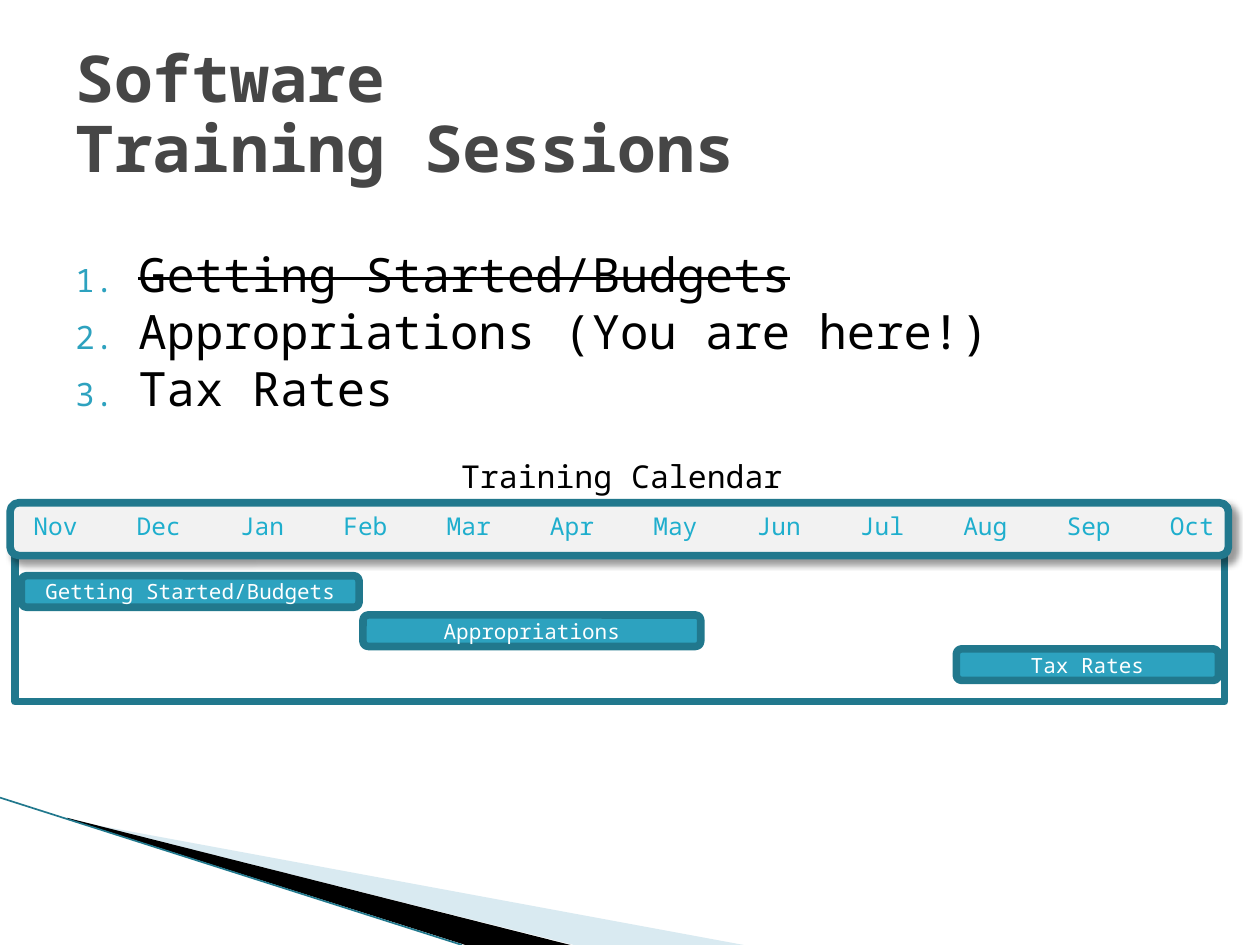
"""Build the training sessions slide with its calendar."""
from dataclasses import dataclass

from lxml.etree import SubElement
from pptx import Presentation
from pptx.dml.color import RGBColor
from pptx.enum.shapes import MSO_CONNECTOR as Connector, MSO_SHAPE as Preset
from pptx.enum.text import MSO_ANCHOR as Anchor, PP_ALIGN as Align
from pptx.oxml.ns import qn
from pptx.util import Pt


@dataclass(frozen=True)
class Theme:
    font: str = "Noto Sans Mono"
    title: str = "464646"
    text: str = "000000"
    bar: str = "2DA2BF"
    border: str = "21788D"
    month: str = "1FAECD"
    header: str = "F2F2F2"
    pale: str = "A0CBDC"
    white: str = "FFFFFF"
    title_size: float = 36.9
    list_size: float = 27
    caption_size: float = 18
    month_size: float = 14
    bar_size: float = 12
    border_width: float = 4.33


THEME = Theme()
MONTHS = "Nov Dec Jan Feb Mar Apr May Jun Jul Aug Sep Oct".split()
SESSIONS = ["Getting Started/Budgets", "Appropriations (You are here!)", "Tax Rates"]
BARS = [
    ("Getting Started/Budgets", 12.2, 329, 193),
    ("Appropriations", 207.4, 351.4, 193),
    ("Tax Rates", 546.5, 370.8, 149.8),
]


def style(paragraph, size, color, bold=False):
    for run in paragraph.runs:
        run.font.name = THEME.font
        run.font.size = Pt(size)
        run.font.bold = bold
        run.font.color.rgb = RGBColor.from_string(color)


def add_text(shapes, box, text, size, color, align=Align.LEFT, bold=False, wrap=True):
    shape = shapes.add_textbox(*map(Pt, box))
    frame = shape.text_frame
    frame.word_wrap = wrap
    frame.text = text
    for paragraph in frame.paragraphs:
        paragraph.alignment = align
        style(paragraph, size, color, bold)
    return frame


def add_box(shapes, preset, box, fill=None):
    shape = shapes.add_shape(preset, *map(Pt, box))
    shape.shadow.inherit = False
    if fill:
        shape.fill.solid()
        shape.fill.fore_color.rgb = RGBColor.from_string(fill)
    else:
        shape.fill.background()
    shape.line.color.rgb = RGBColor.from_string(THEME.border)
    shape.line.width = Pt(THEME.border_width)
    return shape


def add_alpha(color, percent):
    SubElement(color, qn("a:alpha"), val=str(percent * 1000))


def add_shadow(shape):
    effects = shape._element.spPr.find(qn("a:effectLst"))
    shadow = SubElement(effects, qn("a:outerShdw"), blurRad=str(Pt(4)),
                        dist=str(Pt(3)), dir=str(45 * 60000), rotWithShape="0")
    add_alpha(SubElement(shadow, qn("a:srgbClr"), val=THEME.text), 40)


def add_wedge(shapes, points, color, opacity=100):
    start, *rest = [(Pt(x), Pt(y)) for x, y in points]
    builder = shapes.build_freeform(*start)
    builder.add_line_segments(rest, close=True)
    shape = builder.convert_to_shape()
    shape.shadow.inherit = False
    shape.fill.solid()
    shape.fill.fore_color.rgb = RGBColor.from_string(color)
    shape.line.fill.background()
    if opacity < 100:
        add_alpha(shape._element.spPr.find(qn("a:solidFill"))[0], opacity)


def add_edge(shapes, start, end):
    line = shapes.add_connector(Connector.STRAIGHT, *map(Pt, start + end))
    line.line.color.rgb = RGBColor.from_string(THEME.border)
    line.line.width = Pt(0.95)
    SubElement(line._element.spPr, qn("a:effectLst"))


def add_number(paragraph):
    properties = paragraph._p.get_or_add_pPr()
    properties.set("marL", str(Pt(36)))
    properties.set("indent", str(Pt(-36)))
    color = SubElement(properties, qn("a:buClr"))
    SubElement(color, qn("a:srgbClr"), val=THEME.bar)
    SubElement(properties, qn("a:buSzPct"), val="68000")
    SubElement(properties, qn("a:buFont"), typeface=THEME.font)
    SubElement(properties, qn("a:buAutoNum"), type="arabicPeriod")


def add_sessions(shapes):
    frame = add_text(shapes, (36, 138.2, 600, 131.8), "\n".join(SESSIONS),
                     THEME.list_size, THEME.text)
    frame.margin_top = Pt(5.5)
    for index, paragraph in enumerate(frame.paragraphs):
        add_number(paragraph)
        paragraph.line_spacing = 0.9
        if index:
            paragraph.space_before = Pt(3.5)
    frame.paragraphs[0].runs[0].font._element.set("strike", "sngStrike")


def add_bar(shapes, label, left, top, width):
    bar = add_box(shapes, Preset.ROUNDED_RECTANGLE, (left, top, width, 18), THEME.bar)
    frame = bar.text_frame
    frame.margin_top = frame.margin_bottom = 0
    frame.vertical_anchor = Anchor.MIDDLE
    frame.text = label
    frame.paragraphs[0].alignment = Align.CENTER
    style(frame.paragraphs[0], THEME.bar_size, THEME.white)


def add_calendar(shapes):
    add_box(shapes, Preset.RECTANGLE, (8.64, 288.7, 691.2, 112.3))
    header = add_box(shapes, Preset.ROUNDED_RECTANGLE, (5.8, 287.3, 696.2, 30.2),
                     THEME.header)
    add_shadow(header)
    for index, month in enumerate(MONTHS):
        add_text(shapes, (10.8 + 59.04 * index, 288.7, 41.8, 24.5), month,
                 THEME.month_size, THEME.month, Align.CENTER, wrap=False)
    for bar in BARS:
        add_bar(shapes, *bar)
    add_text(shapes, (10.8, 257.8, 689, 28.8), "Training Calendar",
             THEME.caption_size, THEME.text, Align.CENTER)


def main():
    presentation = Presentation()
    presentation.slide_width, presentation.slide_height = Pt(720), Pt(540)
    slide = presentation.slides.add_slide(presentation.slide_layouts[6])
    shapes = slide.shapes
    add_wedge(shapes, [(39.6, 468.7), (425, 540), (328, 540), (39.6, 468)],
              THEME.pale, 40)
    add_wedge(shapes, [(38.2, 467.3), (326, 540), (266, 540), (38.9, 468)], THEME.text)
    add_edge(shapes, (0, 455.8), (264, 540))
    add_sessions(shapes)
    title = add_text(shapes, (36, 21.6, 648, 90), "Software\vTraining Sessions",
                     THEME.title_size, THEME.title, bold=True)
    title.vertical_anchor = Anchor.MIDDLE
    title.paragraphs[0].line_spacing = 0.9
    add_calendar(shapes.add_group_shape().shapes)
    presentation.save("out.pptx")


if __name__ == "__main__":
    main()
